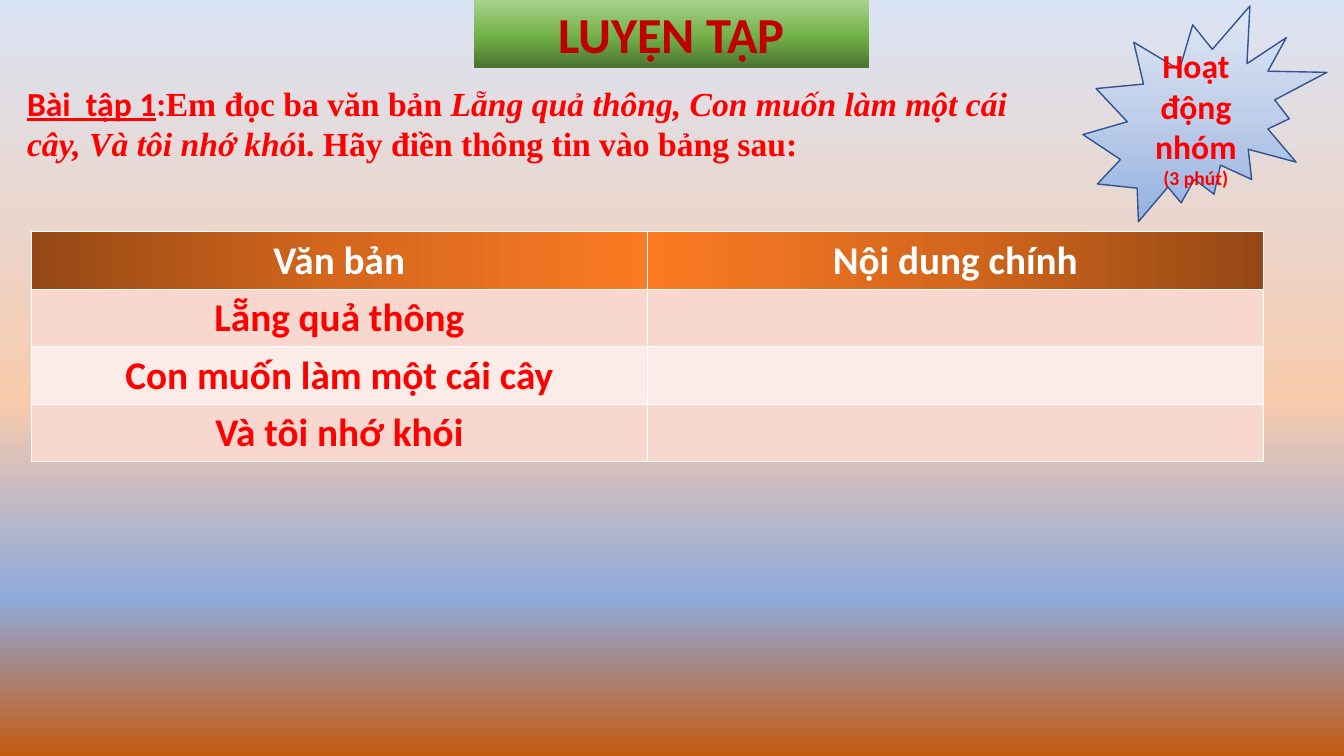
from pptx import Presentation
from pptx.dml.color import RGBColor
from pptx.enum.shapes import MSO_SHAPE
from pptx.enum.text import MSO_ANCHOR, MSO_AUTO_SIZE, PP_ALIGN
from pptx.oxml import parse_xml
from pptx.oxml.ns import nsdecls, qn
from pptx.util import Inches, Pt

RED = "FF0000"
SERIF = "Times New Roman"
TEXTS = ["Lẵng quả thông", "Con muốn làm một cái cây", "Và tôi nhớ khói"]
HEADER_STOPS = [(0, "954815"), (50, "D4671D"), (100, "FB7A23")]


def rgb(value):
    """Turn a hex string into a colour."""
    return RGBColor.from_string(value)


def set_gradient(fill, parent, stops, angle):
    """Give an element a linear gradient fill."""
    fill.solid()
    fill.fore_color.rgb = rgb(stops[0][1])
    stop_xml = "".join(
        f'<a:gs pos="{pos * 1000}"><a:srgbClr val="{color}"/></a:gs>'
        for pos, color in stops)
    gradient = parse_xml(
        f'<a:gradFill {nsdecls("a")} rotWithShape="1"><a:gsLst>{stop_xml}</a:gsLst>'
        f'<a:lin ang="{angle * 60000}" scaled="0"/></a:gradFill>')
    parent.replace(parent.find(qn("a:solidFill")), gradient)


def place(sp, left, top, width, height):
    """Move and size a shape, in inches."""
    sp.left, sp.top = Inches(left), Inches(top)
    sp.width, sp.height = Inches(width), Inches(height)


def add_run(p, text, size, color=RED, font="Calibri", italic=False, underline=False):
    """Add a bold run to a paragraph."""
    r = p.add_run()
    r.text = text
    r.font.size, r.font.name = Pt(size), font
    r.font.bold, r.font.italic, r.font.underline = True, italic, underline
    r.font.color.rgb = rgb(color)


def add_banner(slide):
    """Shape the title placeholder as a green rounded banner."""
    title = slide.shapes.title
    place(title, 4.7, 0, 3.92, 0.67)
    sp_pr = title._element.spPr
    sp_pr.append(parse_xml(
        f'<a:prstGeom {nsdecls("a")} prst="roundRect"><a:avLst/></a:prstGeom>'))
    set_gradient(title.fill, sp_pr,
                 [(0, "4B7430"), (48, "74B349"), (100, "A9D18E")], 270)
    tf = title.text_frame
    tf.auto_size = MSO_AUTO_SIZE.NONE
    tf.vertical_anchor = MSO_ANCHOR.MIDDLE
    p = tf.paragraphs[0]
    p.alignment = PP_ALIGN.CENTER
    p.line_spacing = 1.0
    add_run(p, "LUYỆN TẬP", 36, "C00000")


def add_task(slide):
    """Add the exercise instruction."""
    sp = slide.shapes.add_textbox(Inches(0.17), Inches(0.77), Inches(10.58), Inches(1.21))
    tf = sp.text_frame
    tf.word_wrap = True
    tf.margin_right = Inches(0.4)
    p = tf.paragraphs[0]
    add_run(p, "Bài  tập 1", 24, underline=True)
    add_run(p, ":", 24)
    add_run(p, "Em đọc ba văn bản ", 24, font=SERIF)
    add_run(p, "Lẵng quả thông, Con muốn làm một cái cây, Và tôi nhớ khó", 24,
            font=SERIF, italic=True)
    add_run(p, "i. Hãy điền thông tin vào bảng sau:", 24, font=SERIF)


def add_burst(slide):
    """Add the group activity star."""
    sp = slide.shapes.add_shape(MSO_SHAPE.EXPLOSION2, Inches(10.74), Inches(0.06),
                                Inches(2.42), Inches(2.14))
    sp.shadow.inherit = False
    set_gradient(sp.fill, sp._element.spPr,
                 [(0, "94B1E1"), (50, "BFCEEA"), (100, "E0E7F4")], 270)
    sp.line.color.rgb = rgb("325491")
    sp.line.width = Pt(1)
    tf = sp.text_frame
    tf.word_wrap = True
    tf.vertical_anchor = MSO_ANCHOR.MIDDLE
    p = tf.paragraphs[0]
    p.alignment = PP_ALIGN.CENTER
    add_run(p, "Hoạt động nhóm ", 24)
    add_run(p, "(3 phút)", 14)


def fill_cell(cell, text, color):
    """Write centred text in a table cell."""
    p = cell.text_frame.paragraphs[0]
    p.alignment = PP_ALIGN.CENTER
    add_run(p, text, 28, color)


def add_text_table(slide):
    """Add the table of texts and their main content."""
    table = slide.shapes.add_table(len(TEXTS) + 1, 2, Inches(0.31), Inches(2.3),
                                   Inches(12.22), Inches(2.28)).table
    for col, (heading, angle) in enumerate([("Văn bản", 0), ("Nội dung chính", 180)]):
        cell = table.cell(0, col)
        fill_cell(cell, heading, "FFFFFF")
        set_gradient(cell.fill, cell._tc.tcPr, HEADER_STOPS, angle)
    for row, text in enumerate(TEXTS, 1):
        fill_cell(table.cell(row, 0), text, RED)
        for cell in table.rows[row].cells:
            cell.fill.solid()
            cell.fill.fore_color.rgb = rgb("F8D7CE" if row % 2 else "FCECE8")


def main():
    """Build and save the slide."""
    prs = Presentation()
    prs.slide_width, prs.slide_height = Inches(13.33), Inches(7.5)
    slide = prs.slides.add_slide(prs.slide_layouts[5])
    fill = slide.background.fill
    set_gradient(fill, slide._element.cSld.find(qn("p:bg")).find(qn("p:bgPr")),
                 [(0, "DAE3F3"), (53, "F8CBAD"), (79, "8FAADC"), (100, "C55A11")], 90)
    add_banner(slide)
    add_task(slide)
    add_burst(slide)
    add_text_table(slide)
    prs.save("out.pptx")


if __name__ == "__main__":
    main()
